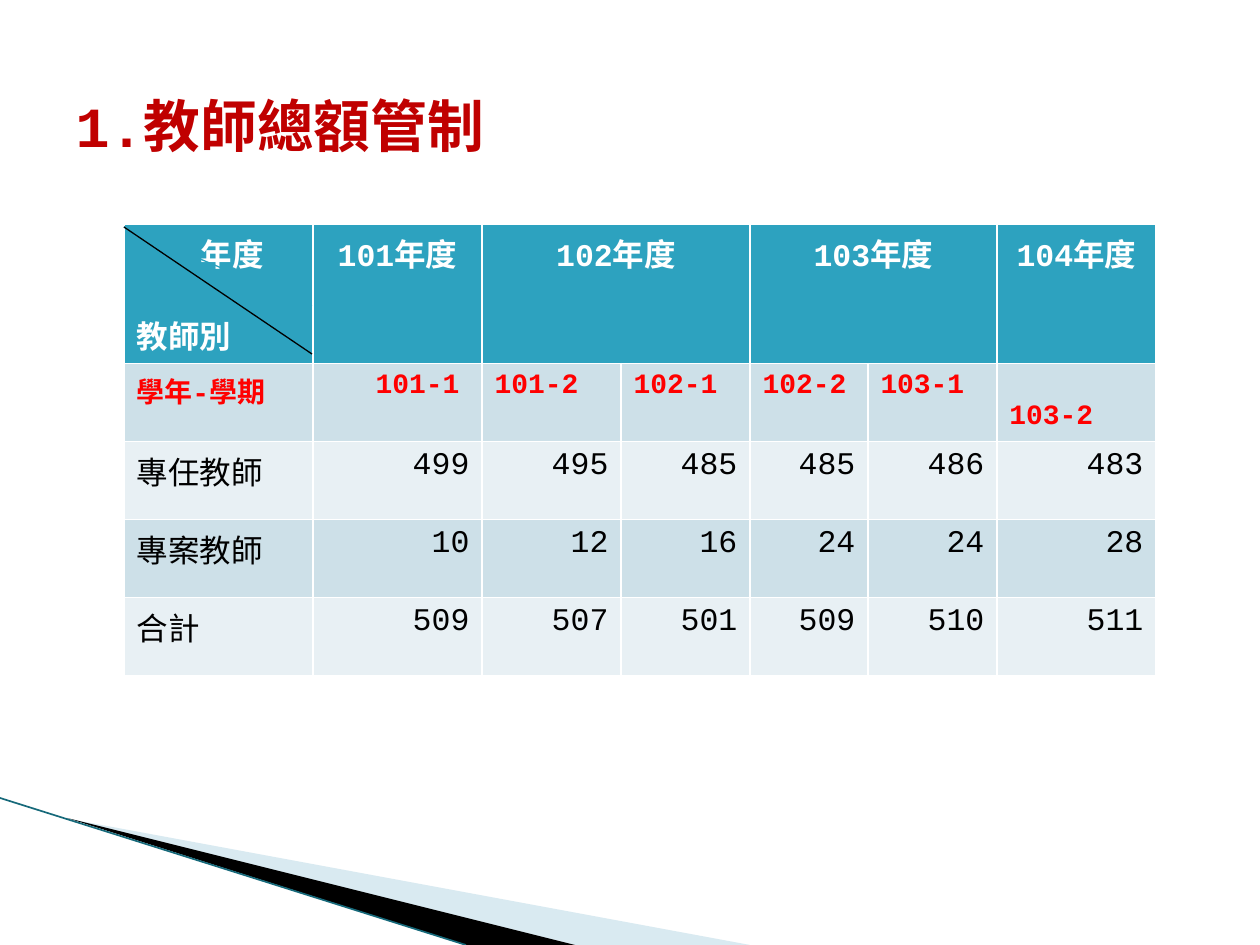
"""Build the slide on the teacher headcount cap: title, yearly table and corner swoosh."""
from pptx import Presentation
from pptx.dml.color import RGBColor
from pptx.enum.lang import MSO_LANGUAGE_ID as Lang
from pptx.enum.shapes import MSO_CONNECTOR as Connector
from pptx.enum.text import MSO_ANCHOR as Anchor, PP_ALIGN as Align
from pptx.oxml.ns import qn
from pptx.oxml.xmlchemy import OxmlElement
from pptx.util import Pt

PX = 914400 / 126
FONT = "Courier New"
WHITE = RGBColor(0xFF, 0xFF, 0xFF)
BLACK = RGBColor(0, 0, 0)
RED = RGBColor(0xFF, 0, 0)
DARK_RED = RGBColor(0xC0, 0, 0)
TEAL = RGBColor(0x2D, 0xA2, 0xBF)
DEEP_TEAL = RGBColor(0x16, 0x69, 0x7A)
PALE_BLUE = RGBColor(0xA0, 0xCB, 0xDC)
BANDS = RGBColor(0xCD, 0xE0, 0xE8), RGBColor(0xE8, 0xF0, 0xF4)

TITLE = "1.教師總額管制"
CORNER = "年度", "教師別"
YEARS = [("101年度", 1, 1), ("102年度", 2, 3), ("103年度", 4, 5), ("104年度", 6, 6)]
TERMS = ["學年-學期", "101-1", "101-2", "102-1", "102-2", "103-1", "103-2"]
COUNTS = [
    ("專任教師", 499, 495, 485, 485, 486, 483),
    ("專案教師", 10, 12, 16, 24, 24, 28),
    ("合計", 509, 507, 501, 509, 510, 511),
]
COLUMNS = [189, 169, 139, 129, 118, 129, 159]
ROWS = [139, 78, 78, 78, 78]
TABLE_LEFT, TABLE_TOP = 124, 224
SWOOSHES = [
    ([(69, 819), (750, 945), (575, 945)], PALE_BLUE, 40),
    ([(67, 818), (575, 945), (466, 945)], BLACK, 100),
]
EDGE = (0, 798, 466, 945, DEEP_TEAL, 0.95)
DIAGONALS = [
    (124, 227, 307, 354, TEAL, 0.75),
    (124, 227, 312, 306, TEAL, 0.75),
    (124, 227, 312, 354, BLACK, 0.75),
]


def px(length):
    return round(length * PX)


def write(paragraph, text, size, color, bold=False, align=Align.LEFT):
    paragraph.alignment = align
    run = paragraph.add_run()
    run.text = str(text)
    font = run.font
    font.name, font.size, font.bold = FONT, Pt(size), bold
    font.color.rgb = color
    font.language_id = Lang.TRADITIONAL_CHINESE


def indent(paragraph, length):
    paragraph._p.get_or_add_pPr().set("marL", str(px(length)))


def draw_line(slide, left, top, right, bottom, color, width):
    line = slide.shapes.add_connector(
        Connector.STRAIGHT, px(left), px(top), px(right), px(bottom))
    line.line.color.rgb = color
    line.line.width = Pt(width)
    line._element.spPr.append(OxmlElement("a:effectLst"))


def draw_swoosh(slide, points, color, opacity):
    builder = slide.shapes.build_freeform(*points[0], scale=PX)
    builder.add_line_segments(points[1:])
    swoosh = builder.convert_to_shape()
    swoosh.shadow.inherit = False
    swoosh.line.fill.background()
    swoosh.fill.solid()
    swoosh.fill.fore_color.rgb = color
    alpha = OxmlElement("a:alpha")
    alpha.set("val", str(opacity * 1000))
    swoosh._element.spPr.find(f".//{qn('a:srgbClr')}").append(alpha)


def add_title(slide):
    title = slide.shapes.title
    title.left, title.top, title.width, title.height = map(px, (63, 38, 1134, 158))
    frame = title.text_frame
    frame.vertical_anchor = Anchor.MIDDLE
    frame.margin_top = px(22)
    write(frame.paragraphs[0], TITLE, 32.4, DARK_RED, True)


def add_headcount(slide):
    table = slide.shapes.add_table(
        len(ROWS), len(COLUMNS), px(TABLE_LEFT), px(TABLE_TOP),
        px(sum(COLUMNS)), px(sum(ROWS))).table
    for column, width in zip(table.columns, COLUMNS):
        column.width = px(width)
    for index, (row, height) in enumerate(zip(table.rows, ROWS)):
        row.height = px(height)
        for cell in row.cells:
            cell.fill.solid()
            cell.fill.fore_color.rgb = BANDS[(index - 1) % 2] if index else TEAL

    corner = table.cell(0, 0).text_frame
    year_label, teacher_label = corner.paragraphs[0], corner.add_paragraph()
    for label, text in zip((year_label, teacher_label), CORNER):
        write(label, text, 18, WHITE, True)
    indent(year_label, 64)
    teacher_label.space_before = Pt(20.4)

    for year, first, last in YEARS:
        cell = table.cell(0, first)
        if last > first:
            cell.merge(table.cell(0, last))
        write(cell.text_frame.paragraphs[0], year, 18, WHITE, True, Align.CENTER)

    for column, term in enumerate(TERMS):
        write(table.cell(1, column).text_frame.paragraphs[0], term, 16, RED, True)
    indent(table.cell(1, 1).text_frame.paragraphs[0], 50)
    table.cell(1, 6).margin_top = px(38)

    for row, counts in enumerate(COUNTS, 2):
        for column, value in enumerate(counts):
            write(table.cell(row, column).text_frame.paragraphs[0], value, 18, BLACK,
                  align=Align.RIGHT if column else Align.LEFT)


def main():
    deck = Presentation()
    deck.slide_width, deck.slide_height = px(1260), px(945)
    slide = deck.slides.add_slide(deck.slide_layouts[5])
    for swoosh in SWOOSHES:
        draw_swoosh(slide, *swoosh)
    draw_line(slide, *EDGE)
    add_title(slide)
    add_headcount(slide)
    for diagonal in DIAGONALS:
        draw_line(slide, *diagonal)
    deck.save("out.pptx")


if __name__ == "__main__":
    main()
